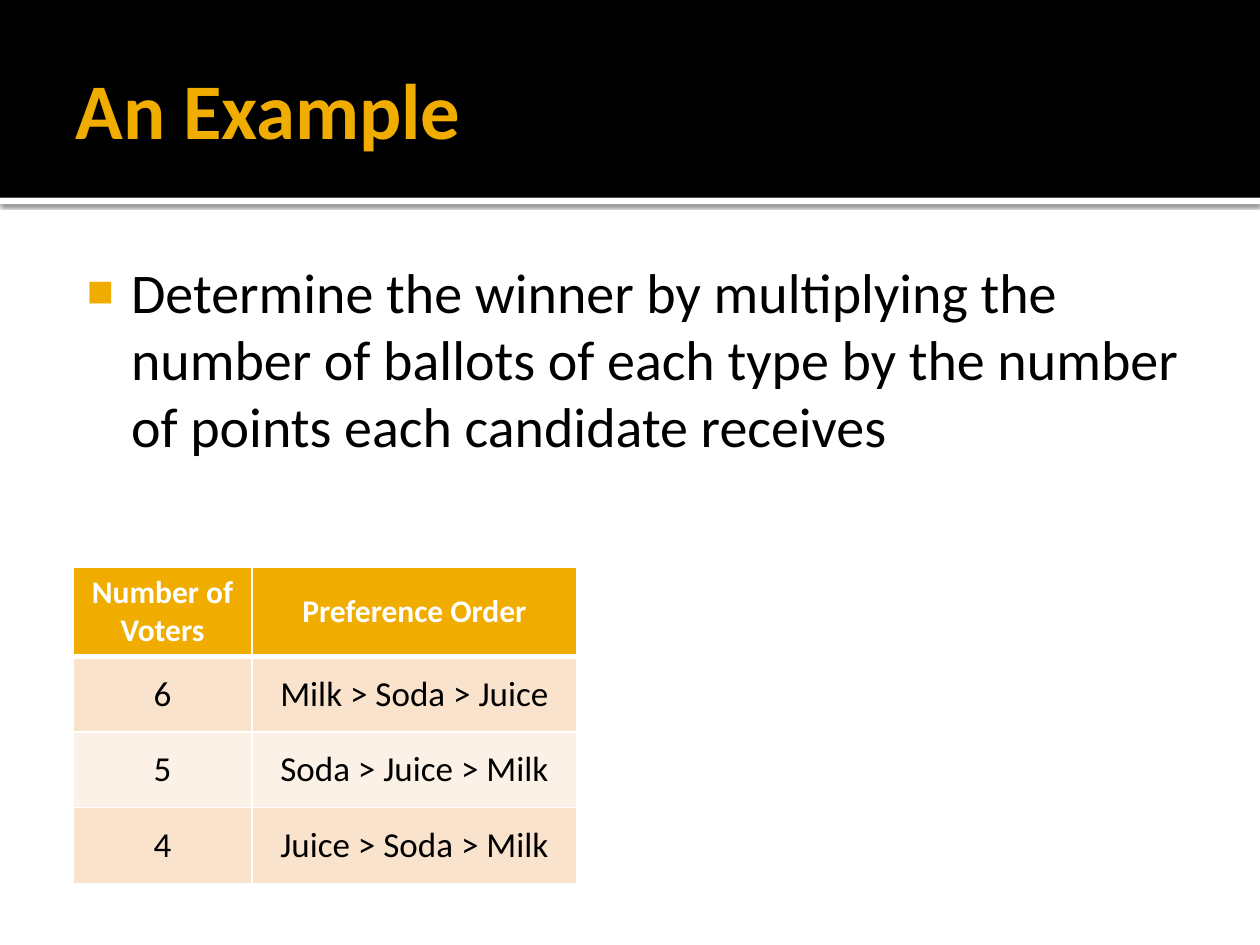
from dataclasses import dataclass

from lxml import etree
from pptx import Presentation
from pptx.dml.color import RGBColor
from pptx.enum import shapes, text
from pptx.oxml import ns
from pptx.util import Pt


@dataclass(frozen=True)
class Theme:
    font: str = "Calibri"
    accent: str = "F0AD00"
    black: str = "000000"
    white: str = "FFFFFF"
    bands: tuple = ("F9E3CC", "FCF1E7")
    title_size: float = 45
    body_size: float = 32
    head_size: float = 18
    cell_size: float = 20


THEME = Theme()


def rgb(value):
    return RGBColor.from_string(value)


def add_xml(parent, tag, **attrs):
    return etree.SubElement(parent, ns.qn(tag), attrs)


def apply(target, formats):
    for name, value in formats.items():
        setattr(target, name, value)


def place(sp, box):
    apply(sp, dict(zip(("left", "top", "width", "height"), map(Pt, box))))


def write(tf, words, size, color, bold=False, align=text.PP_ALIGN.LEFT):
    p = tf.paragraphs[0]
    p.alignment = align
    r = p.add_run()
    r.text = words
    apply(r.font, {"name": THEME.font, "size": Pt(size), "bold": bold})
    r.font.color.rgb = rgb(color)
    return p


def set_frame(tf, insets, anchor):
    names = ("margin_left", "margin_top", "margin_right", "margin_bottom")
    apply(tf, dict(zip(names, map(Pt, insets))))
    apply(tf, {"word_wrap": True, "auto_size": text.MSO_AUTO_SIZE.NONE,
               "vertical_anchor": anchor})


def add_band(s, box, color):
    sp = s.shapes.add_shape(shapes.MSO_SHAPE.RECTANGLE, *map(Pt, box))
    sp.shadow.inherit = False
    sp.fill.solid()
    sp.fill.fore_color.rgb = rgb(color)
    sp.line.fill.background()
    s.shapes.element.insert(2, sp.element)
    return sp


def add_header(s, box):
    left, top, width, height = box
    add_band(s, box, THEME.black)
    rule = add_band(s, (left, top + height, width, 3.6), THEME.white)
    effects = rule.element.spPr.find(ns.qn("a:effectLst"))
    shadow = add_xml(effects, "a:outerShdw", blurRad=str(Pt(2.5)),
                     dist=str(Pt(0.8)), dir="5400000", rotWithShape="0")
    color = add_xml(shadow, "a:srgbClr", val=THEME.black)
    add_xml(color, "a:alpha", val="60000")

    title = s.shapes.title
    place(title, (left + 36, top + 12.24, width - 72, 98.64))
    set_frame(title.text_frame, (7.2, 3.6, 3.6, 3.6), text.MSO_ANCHOR.MIDDLE)
    write(title.text_frame, "An Example", THEME.title_size, THEME.accent, True)


def add_body(s, box, words):
    body = s.placeholders[1]
    place(body, box)
    set_frame(body.text_frame, (4.32, 7.2, 7.2, 3.6), text.MSO_ANCHOR.TOP)
    p = write(body.text_frame, words, THEME.body_size, THEME.black)
    p.space_before = Pt(0)
    pPr = p.runs[0].font._element.getparent().getparent().get_or_add_pPr()
    pPr.set("marL", str(Pt(34.56)))
    pPr.set("indent", str(Pt(-25.2)))
    color = add_xml(pPr, "a:buClr")
    add_xml(color, "a:srgbClr", val=THEME.accent)
    add_xml(pPr, "a:buSzPct", val="80000")
    add_xml(pPr, "a:buFont", typeface="Arial")
    add_xml(pPr, "a:buChar", char="■")


def set_borders(cell, bottom):
    tcPr = cell.fill._xPr
    widths = {"a:lnL": 1, "a:lnR": 1, "a:lnT": 1, "a:lnB": bottom}
    for i, (tag, width) in enumerate(widths.items()):
        line = etree.Element(ns.qn(tag), w=str(Pt(width)))
        fill = add_xml(line, "a:solidFill")
        add_xml(fill, "a:srgbClr", val=THEME.white)
        tcPr.insert(i, line)


def add_votes(s, box, rows, col_widths, row_heights):
    frame = s.shapes.add_table(len(rows), len(col_widths), *map(Pt, box))
    table = frame.table
    for col, width in zip(table.columns, col_widths):
        col.width = Pt(width)
    for i, (row, height, values) in enumerate(zip(table.rows, row_heights, rows)):
        row.height = Pt(height)
        head = i == 0
        fill = THEME.accent if head else THEME.bands[(i - 1) % 2]
        size = THEME.head_size if head else THEME.cell_size
        color = THEME.white if head else THEME.black
        for cell, words in zip(row.cells, values):
            cell.vertical_anchor = text.MSO_ANCHOR.MIDDLE
            cell.fill.solid()
            cell.fill.fore_color.rgb = rgb(fill)
            write(cell.text_frame, words, size, color, head, text.PP_ALIGN.CENTER)
            set_borders(cell, 3 if head else 1)
            if i == 1:
                cell.fill._xPr.find(ns.qn("a:lnT")).set("w", str(Pt(3)))


def main():
    prs = Presentation()
    apply(prs, {"slide_width": Pt(720), "slide_height": Pt(540)})
    s = prs.slides.add_slide(prs.slide_layouts[1])
    s.background.fill.solid()
    s.background.fill.fore_color.rgb = rgb(THEME.white)
    add_header(s, (0, 0, 720, 113.04))
    add_body(s, (36, 139.68, 648, 364.32),
             "Determine the winner by multiplying the number of ballots of each "
             "type by the number of points each candidate receives")
    add_votes(s, (41.76, 324, 288, 180),
              [("Number of Voters", "Preference Order"),
               ("6", "Milk > Soda > Juice"),
               ("5", "Soda > Juice > Milk"),
               ("4", "Juice > Soda > Milk")],
              (102.24, 185.76), (50.4, 43.2, 43.2, 43.2))
    prs.save("out.pptx")


if __name__ == "__main__":
    main()
